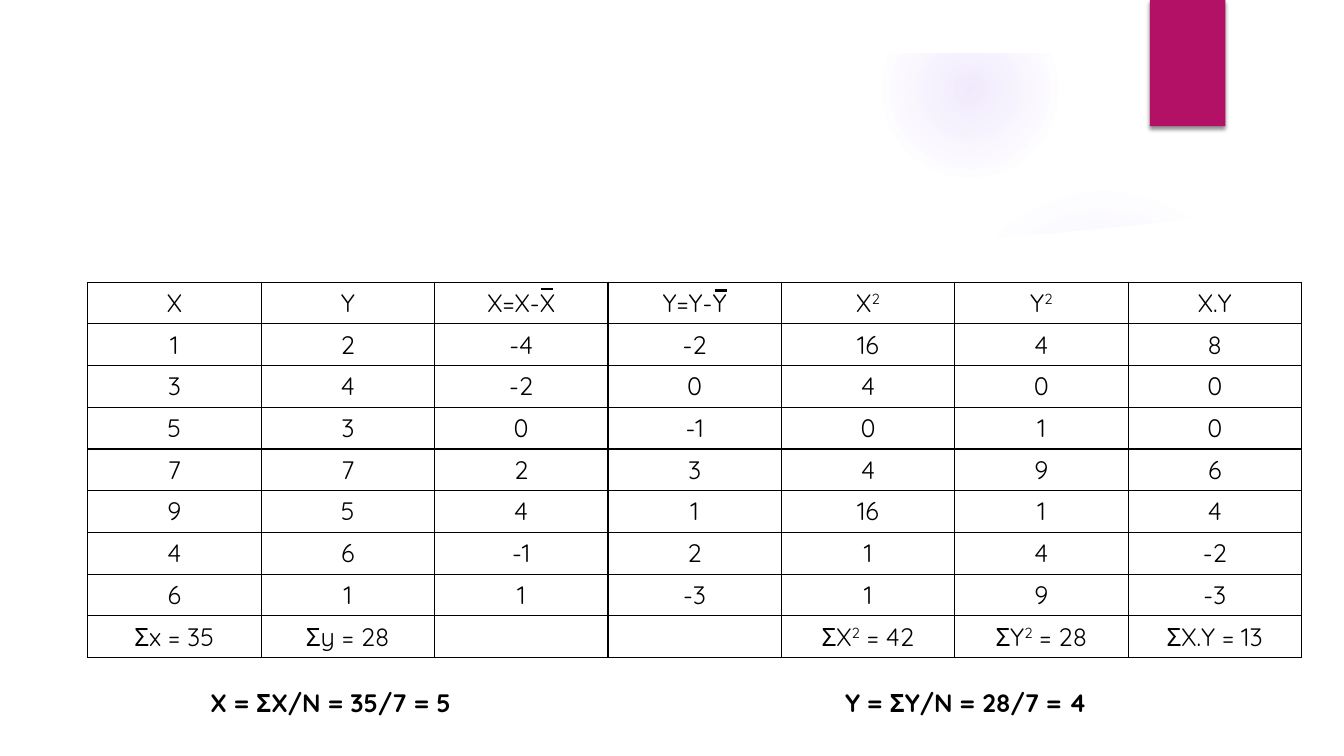
from dataclasses import dataclass

from lxml.etree import SubElement
from pptx import Presentation
from pptx.dml.color import RGBColor
from pptx.enum.shapes import MSO_CONNECTOR as Link, MSO_SHAPE as Kind
from pptx.enum.text import PP_ALIGN as Align
from pptx.oxml import parse_xml
from pptx.oxml.ns import nsdecls, qn
from pptx.util import Cm, Pt

FONT, INK, WHITE, PINK, GLOW = "Quicksand", "000000", "FFFFFF", "B31166", "9B6BF2"
WIDE, HIGH = 33.87, 19.05
COL, ROW = 4.37, 1.05
# "^" raises the one character after it
ROWS = [
    ["X", "Y", "X=X-X", "Y=Y-Y", "X^2", "Y^2", "X.Y"],
    ["1", "2", "-4", "-2", "16", "4", "8"],
    ["3", "4", "-2", "0", "4", "0", "0"],
    ["5", "3", "0", "-1", "0", "1", "0"],
    ["7", "7", "2", "3", "4", "9", "6"],
    ["9", "5", "4", "1", "16", "1", "4"],
    ["4", "6", "-1", "2", "1", "4", "-2"],
    ["6", "1", "1", "-3", "1", "9", "-3"],
    ["Σx = 35", "Σy = 28", "", "", "ΣX^2 = 42", "ΣY^2 = 28", "ΣX.Y = 13"],
]
MEANS = "X = ΣX/N = 35/7 = 5\tY = ΣY/N = 28/7 = 4"


@dataclass
class Orb:
    left: float
    top: float
    size: float
    stops: list[tuple[int, int]]  # place and opacity, in percent


@dataclass
class Bar:
    left: float
    top: float
    width: float


ORBS = [
    Orb(23.9, 4.65, 7.82, [(0, 7), (36, 6), (69, 0), (100, 0)]),
    Orb(22.22, 0.03, 4.45, [(0, 14), (36, 7), (73, 0), (100, 0)]),
]
BARS = [Bar(13.64, 7.29, 0.3), Bar(18.01, 7.32, 0.3)]


def tint(code: str) -> RGBColor:
    return RGBColor.from_string(code)


def paint(shape, code: str) -> None:
    shape.shadow.inherit = False
    shape.fill.solid()
    shape.fill.fore_color.rgb = tint(code)
    shape.line.fill.background()


def style(para, bold: bool = False) -> None:
    font = para.font
    font.name, font.size, font.bold = FONT, Pt(18), bold
    font.color.rgb = tint(INK)


def add_orb(slide, orb: Orb) -> None:
    shape = slide.shapes.add_shape(
        Kind.OVAL, Cm(orb.left), Cm(orb.top), Cm(orb.size), Cm(orb.size))
    paint(shape, GLOW)
    stops = "".join(
        f'<a:gs pos="{at * 1000}"><a:srgbClr val="{GLOW}">'
        f'<a:alpha val="{alpha * 1000}"/></a:srgbClr></a:gs>'
        for at, alpha in orb.stops)
    grad = parse_xml(
        f'<a:gradFill {nsdecls("a")}><a:gsLst>{stops}</a:gsLst><a:path path="circle">'
        '<a:fillToRect l="50000" t="50000" r="50000" b="50000"/></a:path></a:gradFill>')
    props = shape.element.spPr
    props.replace(props.find(qn("a:solidFill")), grad)


def add_panel(slide) -> None:
    """White sheet whose top edge sags as a parabola."""
    left, right, top, sag, base = 1.27, 32.6, 5.18, 1.12, 17.78
    steps = 40
    edge = []
    for i in range(steps + 1):
        t = i / steps
        edge.append((Cm(left + t * (right - left)), Cm(top + sag * 4 * t * (1 - t))))
    pen = slide.shapes.build_freeform(*edge[0])
    pen.add_line_segments(edge[1:] + [(Cm(right), Cm(base)), (Cm(left), Cm(base))])
    paint(pen.convert_to_shape(), WHITE)


def add_frame(slide) -> None:
    frame = slide.shapes.add_shape(Kind.FRAME, 0, 0, Cm(WIDE), Cm(HIGH))
    frame.adjustments[0] = 0.07
    paint(frame, WHITE)


def add_tab(slide) -> None:
    tab = slide.shapes.add_shape(Kind.RECTANGLE, Cm(28.98), 0, Cm(1.9), Cm(3.18))
    paint(tab, PINK)
    tab.element.spPr.find(qn("a:effectLst")).append(parse_xml(
        f'<a:outerShdw {nsdecls("a")} blurRad="{Pt(3)}" dist="{Pt(2)}" dir="5400000" '
        f'rotWithShape="0"><a:srgbClr val="{INK}"><a:alpha val="45000"/></a:srgbClr>'
        '</a:outerShdw>'))


def fill_cell(cell, text: str) -> None:
    cell.fill.background()
    props = cell._tc.get_or_add_tcPr()
    for i, side in enumerate("LRTB"):
        props.insert(i, parse_xml(
            f'<a:ln{side} {nsdecls("a")} w="{Pt(1)}"><a:solidFill>'
            f'<a:srgbClr val="{INK}"/></a:solidFill></a:ln{side}>'))
    para = cell.text_frame.paragraphs[0]
    para.alignment = Align.CENTER
    style(para)
    base, _, rest = text.partition("^")
    for part, lift in ((base, 0), (rest[:1], 30000), (rest[1:], 0)):
        if part:
            run = para.add_run()
            run.text = part
            if lift:
                run.font._element.set("baseline", str(lift))


def add_grid(slide) -> None:
    rows, cols = len(ROWS), len(ROWS[0])
    grid = slide.shapes.add_table(
        rows, cols, Cm(2.21), Cm(7.11), Cm(COL * cols), Cm(ROW * rows)).table
    grid.first_row = grid.horz_banding = False
    for col in grid.columns:
        col.width = Cm(COL)
    for row, texts in zip(grid.rows, ROWS):
        row.height = Cm(ROW)
        for cell, text in zip(row.cells, texts):
            fill_cell(cell, text)


def add_bar(slide, bar: Bar) -> None:
    line = slide.shapes.add_connector(
        Link.STRAIGHT, Cm(bar.left), Cm(bar.top), Cm(bar.left + bar.width), Cm(bar.top))
    line.line.color.rgb = tint(INK)
    line.line.width = Pt(1.5)
    SubElement(line.element.spPr, qn("a:effectLst"))


def add_means(slide) -> None:
    frame = slide.shapes.add_textbox(Cm(5.05), Cm(17.2), Cm(28.8), Cm(1.8)).text_frame
    frame.word_wrap = True
    para = frame.paragraphs[0]
    para.text = MEANS
    tabs = SubElement(para._p.get_or_add_pPr(), qn("a:tabLst"))
    SubElement(tabs, qn("a:tab"), pos=str(Cm(16)), algn="l")
    style(para, bold=True)


def main() -> None:
    deck = Presentation()
    deck.slide_width, deck.slide_height = Cm(WIDE), Cm(HIGH)
    slide = deck.slides.add_slide(deck.slide_layouts[6])
    for orb in ORBS:
        add_orb(slide, orb)
    add_panel(slide)
    add_frame(slide)
    add_tab(slide)
    add_grid(slide)
    for bar in BARS:
        add_bar(slide, bar)
    add_means(slide)
    deck.save("out.pptx")


if __name__ == "__main__":
    main()
